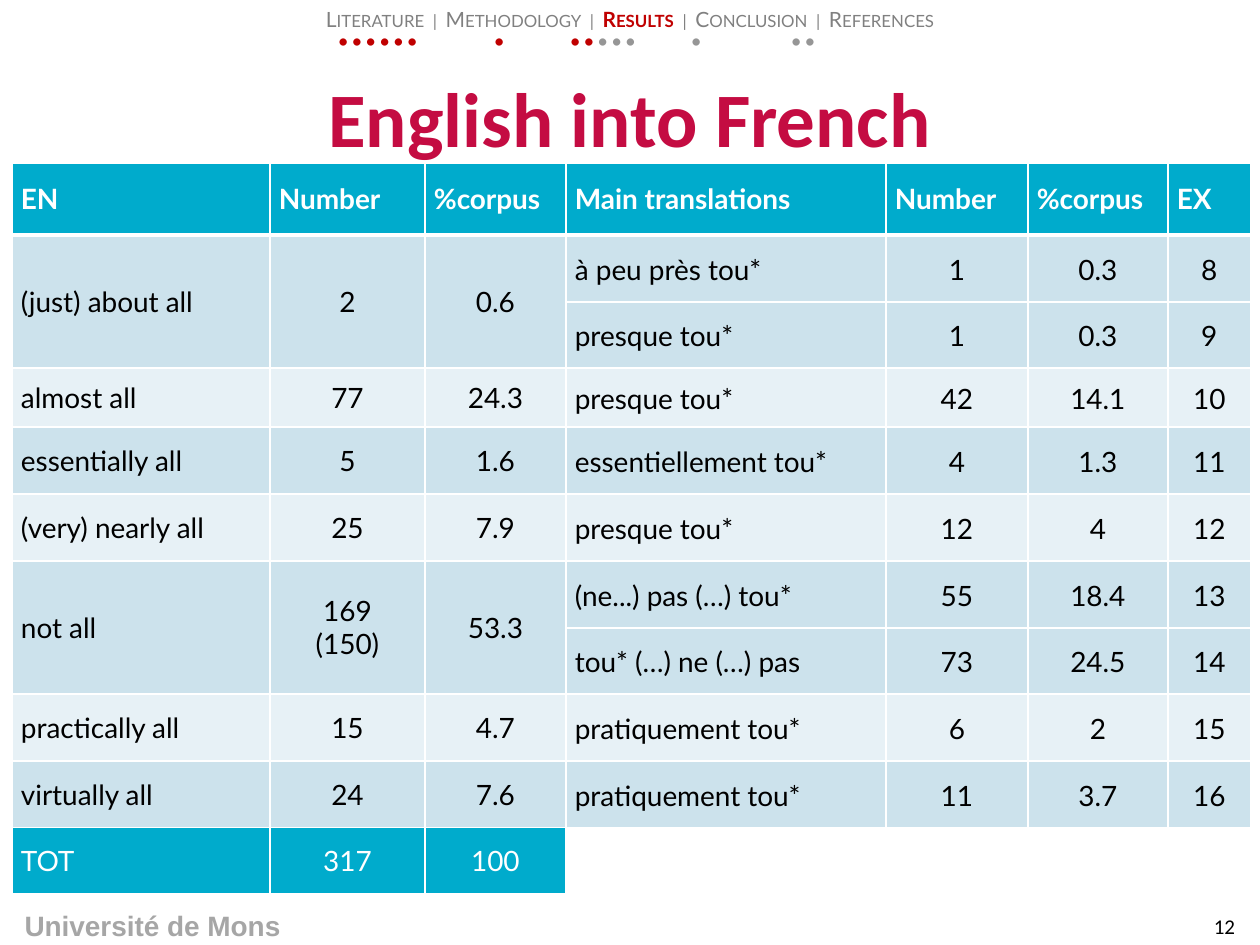
from pptx import Presentation
from pptx.dml.color import RGBColor
from pptx.enum.text import MSO_ANCHOR, PP_ALIGN
from pptx.oxml.ns import qn
from pptx.util import Pt
from lxml import etree

PX = 914400 / 126
LEFT, CENTER, JUSTIFY = PP_ALIGN.LEFT, PP_ALIGN.CENTER, PP_ALIGN.JUSTIFY
TOP, MIDDLE = MSO_ANCHOR.TOP, MSO_ANCHOR.MIDDLE
COLORS = {
    "white": "FFFFFF", "black": "000000", "title": "C40C42", "red": "C00000",
    "gray": "808080", "dot": "969696", "footer": "A6A6A6",
    "head": "00ABCC", "dark": "CCE2EC", "light": "E7F1F6",
}
COLS = [258, 155, 141, 320, 142, 140, 83]
ROWS = [72, 67, 66, 59, 67, 67, 67, 66, 67, 67, 66]
HEADER = ["EN", "Number", "%corpus", "Main translations", "Number", "%corpus", "EX"]
GROUPS = [
    ("(just) about all", "2", "0.6", [("à peu près tou*", "1", "0.3", "8"),
                                      ("presque tou*", "1", "0.3", "9")]),
    ("almost all", "77", "24.3", [("presque tou*", "42", "14.1", "10")]),
    ("essentially all", "5", "1.6", [("essentiellement tou*", "4", "1.3", "11")]),
    ("(very) nearly all", "25", "7.9", [("presque tou*", "12", "4", "12")]),
    ("not all", "169\n(150)", "53.3", [("(ne...) pas (…) tou*", "55", "18.4", "13"),
                                       ("tou* (…) ne (…) pas", "73", "24.5", "14")]),
    ("practically all", "15", "4.7", [("pratiquement tou*", "6", "2", "15")]),
    ("virtually all", "24", "7.6", [("pratiquement tou*", "11", "3.7", "16")]),
]
TOTAL = ["TOT", "317", "100"]


def emu(px):
    return round(px * PX)


def rgb(name):
    return RGBColor.from_string(COLORS[name])


def add_run(p, text, size=16, font="Lato", color="black", bold=False, small=False):
    r = p.add_run()
    r.text = text
    r.font.size, r.font.name, r.font.bold = Pt(size), font, bold
    r.font.color.rgb = rgb(color)
    if small:
        r.font._element.set("cap", "small")


class Deck:
    """Holds the presentation, its style and the current slide."""

    def __init__(self, width, height):
        self.prs = Presentation()
        self.prs.slide_width, self.prs.slide_height = emu(width), emu(height)
        self.s = self.prs.slides.add_slide(self.prs.slide_layouts[6])

    def text(self, box, runs, align=CENTER, anchor=TOP, tabs=(), **fmt):
        tf = self.s.shapes.add_textbox(*map(emu, box)).text_frame
        tf.word_wrap, tf.vertical_anchor = True, anchor
        p = tf.paragraphs[0]
        p.alignment = align
        if tabs:
            tab_list = etree.SubElement(p._p.get_or_add_pPr(), qn("a:tabLst"))
            for pos in tabs:
                etree.SubElement(tab_list, qn("a:tab"), pos=str(emu(pos)), algn="l")
        for text, extra in runs:
            add_run(p, text, **fmt, **extra)

    def table(self, x, y, cols, rows):
        table = self.s.shapes.add_table(
            len(rows), len(cols), emu(x), emu(y), emu(sum(cols)), emu(sum(rows))).table
        for column, width in zip(table.columns, cols):
            column.width = emu(width)
        for row, height in zip(table.rows, rows):
            row.height = emu(height)
        return table

    def borders(self, cell, top=1, bottom=1):
        tc_pr = cell._tc.get_or_add_tcPr()
        widths = {"lnL": 1, "lnR": 1, "lnT": top, "lnB": bottom}
        for i, (tag, width) in enumerate(widths.items()):
            ln = etree.Element(qn("a:" + tag), w=str(Pt(width)))
            fill = etree.SubElement(ln, qn("a:solidFill"))
            etree.SubElement(fill, qn("a:srgbClr"), val=COLORS["white"])
            tc_pr.insert(i, ln)

    def cell(self, cell, text, fill, align=CENTER, spaced=False, top=1, bottom=1, **fmt):
        cell.fill.solid()
        cell.fill.fore_color.rgb = rgb(fill)
        self.borders(cell, top, bottom)
        cell.vertical_anchor = MIDDLE
        cell.margin_left = cell.margin_right = emu(9)
        cell.margin_top = cell.margin_bottom = 0
        tf = cell.text_frame
        for i, line in enumerate(text.split("\n") if text else []):
            p = tf.add_paragraph() if i else tf.paragraphs[0]
            p.alignment = align
            if spaced:
                p.line_spacing, p.space_after = 1.07, Pt(8)
            add_run(p, line, **fmt)


def fill_table(deck):
    table = deck.table(12, 163, COLS, ROWS)
    for c, text in enumerate(HEADER):
        deck.cell(table.cell(0, c), text, "head", JUSTIFY, bottom=3, color="white", bold=True)
    row = 1
    for i, (*source, translations) in enumerate(GROUPS):
        fill = "light" if i % 2 else "dark"
        for k, translation in enumerate(translations):
            values = [*(source if k == 0 else [""] * 3), *translation]
            for c, text in enumerate(values):
                align = {0: JUSTIFY, 3: LEFT}.get(c, CENTER)
                deck.cell(table.cell(row + k, c), text, fill, align, spaced=c > 2,
                          top=3 if row + k == 1 else 1)
        last = row + len(translations) - 1
        if last > row:
            for c in range(3):
                table.cell(row, c).merge(table.cell(last, c))
        row = last + 1
    for c in range(len(COLS)):
        if c < len(TOTAL):
            deck.cell(table.cell(row, c), TOTAL[c], "head", CENTER if c else JUSTIFY,
                      color="white")
        else:
            deck.cell(table.cell(row, c), "", "white")


def main():
    deck = Deck(1260, 945)
    deck.text((-1, 902, 307, 47), [("Université de Mons", {})],
              font="Arial", color="footer", bold=True)
    deck.text((63, 38, 1134, 158), [("English into French", {})], anchor=MIDDLE,
              size=44, font="Calibri", color="title", bold=True)
    deck.text((1189, 907, 71, 38), [("12", {})], anchor=MIDDLE, size=12, font="Calibri")
    fill_table(deck)
    deck.text((0, 0, 1260, 32), [
        ("Literature  |  Methodology  |  ", {"color": "gray"}),
        ("Results", {"color": "red", "bold": True}),
        ("  |  Conclusion  |  References", {"color": "gray"}),
    ], size=12, small=True)
    deck.text((326, 20, 732, 54), [
        ("• • • • • •\t•\t• •", {"color": "red"}),
        (" • • •\t•\t• •", {"color": "dot"}),
    ], align=LEFT, tabs=(156, 232, 353, 453), size=12, bold=True, small=True)
    deck.prs.save("out.pptx")


if __name__ == "__main__":
    main()
